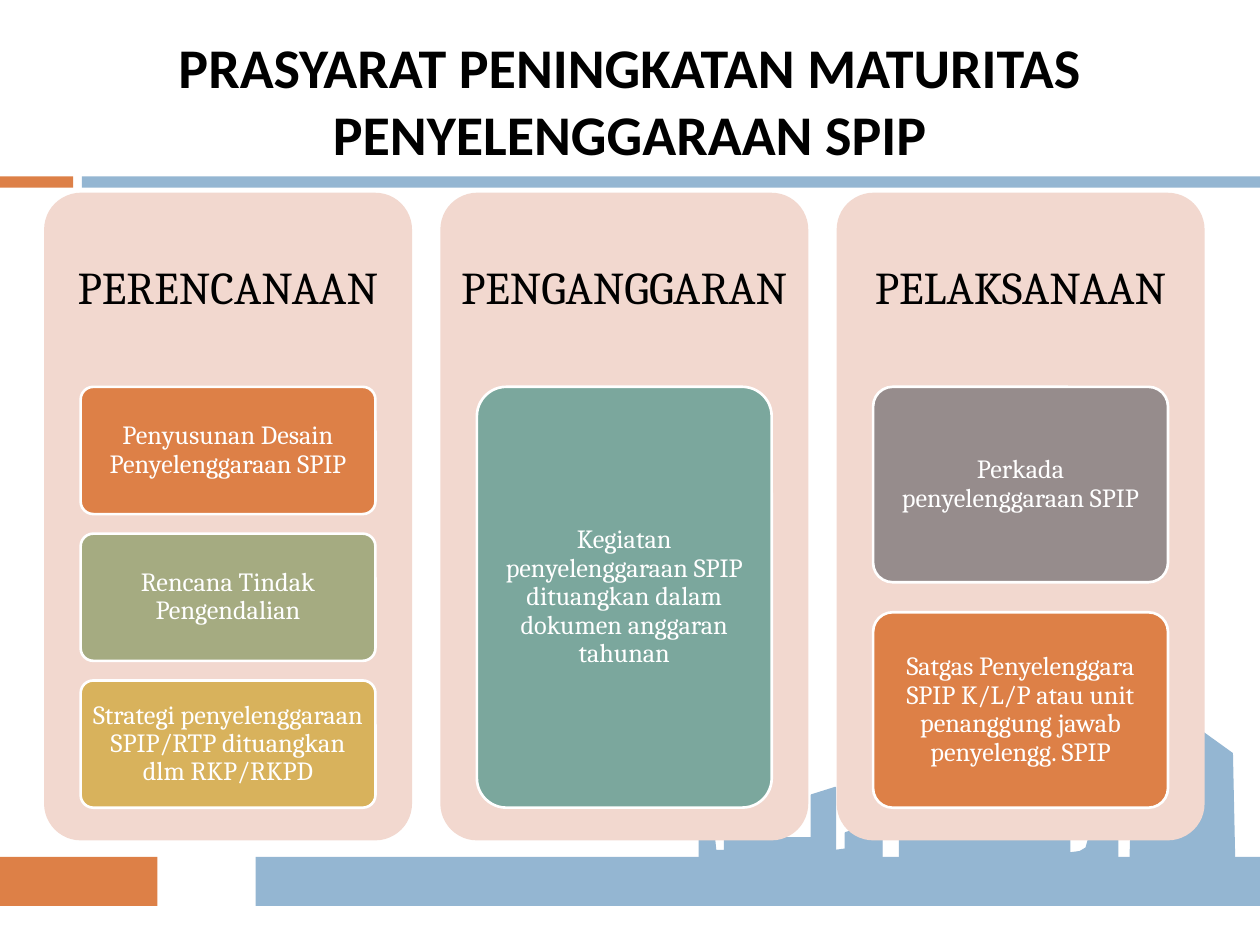
"""Build the SPIP maturity prerequisites slide."""
from pptx import Presentation
from pptx.dml.color import RGBColor
from pptx.enum import shapes, text
from pptx.util import Inches, Pt

BLACK = RGBColor(0x00, 0x00, 0x00)
WHITE = RGBColor(0xFF, 0xFF, 0xFF)
ORANGE = RGBColor(0xDD, 0x80, 0x47)
BLUE = RGBColor(0x94, 0xB6, 0xD2)
PINK = RGBColor(0xF2, 0xD8, 0xCF)
OLIVE = RGBColor(0xA5, 0xAB, 0x81)
GOLD = RGBColor(0xD8, 0xB2, 0x5C)
TEAL = RGBColor(0x7B, 0xA7, 0x9D)
GREY = RGBColor(0x96, 0x8C, 0x8C)

SKYLINE = [
    (5.55, 6.85), (5.55, 6.66), (5.67, 6.65), (5.68, 6.75), (5.75, 6.75),
    (5.75, 6.57), (5.82, 6.54), (5.97, 6.54), (5.98, 6.6), (6.05, 6.58),
    (6.05, 6.65), (6.44, 6.65), (6.44, 6.31), (6.63, 6.25), (6.63, 6.75),
    (6.71, 6.74), (6.71, 6.61), (6.87, 6.56), (7, 6.55), (7, 6.82),
    (7.14, 6.83), (7.14, 6.04), (7.5, 6.04), (7.58, 6.16), (7.58, 6.43),
    (7.81, 6.43), (7.81, 6.55), (8.2, 6.55), (8.19, 6.44), (8.49, 6.44),
    (8.49, 6.77), (8.57, 6.76), (8.62, 6.73), (8.64, 6.66), (8.66, 6.48),
    (8.87, 6.48), (8.87, 6.81), (8.97, 6.81), (9, 5.8), (9.53, 5.8),
    (9.78, 5.98), (9.8, 6.92), (5.55, 6.94),
]
COLUMNS = [
    ("PERENCANAAN", [
        ("Penyusunan Desain Penyelenggaraan SPIP", ORANGE),
        ("Rencana Tindak Pengendalian", OLIVE),
        ("Strategi penyelenggaraan SPIP/RTP dituangkan dlm RKP/RKPD", GOLD)]),
    ("PENGANGGARAN", [
        ("Kegiatan penyelenggaraan SPIP dituangkan dalam dokumen anggaran tahunan", TEAL)]),
    ("PELAKSANAAN", [
        ("Perkada penyelenggaraan SPIP", GREY),
        ("Satgas Penyelenggara SPIP K/L/P atau unit penanggung jawab penyelengg. SPIP", ORANGE)]),
]

prs = Presentation()
prs.slide_width, prs.slide_height = Inches(10), Inches(7.5)
s = prs.slides.add_slide(prs.slide_layouts[6])


def add_box(kind, x, y, w, h, fill):
    sp = s.shapes.add_shape(kind, Inches(x), Inches(y), Inches(w), Inches(h))
    sp.shadow.inherit = False
    sp.fill.solid()
    sp.fill.fore_color.rgb = fill
    sp.line.fill.background()
    if kind == shapes.MSO_SHAPE.ROUNDED_RECTANGLE:
        sp.adjustments[0] = 0.1
    return sp


def set_text(sp, words, font, size, color, inset_x, inset_y, spacing=0.9):
    tf = sp.text_frame
    tf.word_wrap = True
    tf.vertical_anchor = text.MSO_ANCHOR.MIDDLE
    tf.margin_left = tf.margin_right = Inches(inset_x)
    tf.margin_top = tf.margin_bottom = Inches(inset_y)
    tf.text = words
    p = tf.paragraphs[0]
    p.alignment = text.PP_ALIGN.CENTER
    p.line_spacing = spacing
    r = p.runs[0]
    r.font.name, r.font.size = font, Pt(size)
    r.font.color.rgb = color
    return r


for x, y, w, h, fill in [
    (0, 1.4, 0.58, 0.09, ORANGE),
    (0.65, 1.4, 9.35, 0.09, BLUE),
    (2.03, 6.8, 7.97, 0.39, BLUE),
    (0, 6.8, 1.25, 0.39, ORANGE),
]:
    add_box(shapes.MSO_SHAPE.RECTANGLE, x, y, w, h, fill)

points = [(Inches(x), Inches(y)) for x, y in SKYLINE]
fb = s.shapes.build_freeform(*points[0])
fb.add_line_segments(points[1:], close=False)
sp = fb.convert_to_shape()
sp.shadow.inherit = False
sp.fill.solid()
sp.fill.fore_color.rgb = BLUE
sp.line.color.rgb = BLUE
sp.line.width = Pt(0.79)

title = s.shapes.add_textbox(Inches(0), Inches(0.25), Inches(10), Inches(1.08))
r = set_text(title, "PRASYARAT PENINGKATAN MATURITAS PENYELENGGARAAN SPIP",
             "Calibri", 32, BLACK, 0.1, 0.05, 1.0)
r.font.bold = True

ROUNDED = shapes.MSO_SHAPE.ROUNDED_RECTANGLE
TOP, PANEL_W, CARD_TOP, CARD_W, STACK_H = 1.53, 2.92, 3.07, 2.34, 3.34
GAP_RATIO = 2 / 13

for i, (heading, cards) in enumerate(COLUMNS):
    x = 0.35 + i * 3.145
    add_box(ROUNDED, x, TOP, PANEL_W, 5.14, PINK)
    tb = s.shapes.add_textbox(Inches(x), Inches(TOP), Inches(PANEL_W), Inches(1.54))
    set_text(tb, heading, "Cambria", 26, BLACK, 0.11, 0.11)

    n = len(cards)
    card_h = STACK_H / (n + (n - 1) * GAP_RATIO)
    for j, (words, fill) in enumerate(cards):
        y = CARD_TOP + j * card_h * (1 + GAP_RATIO)
        card = add_box(ROUNDED, x + (PANEL_W - CARD_W) / 2, y, CARD_W, card_h, fill)
        card.line.color.rgb = WHITE
        card.line.width = Pt(1.5)
        set_text(card, words, "Cambria", 15, WHITE, 0.04, 0.03)

prs.save("out.pptx")
